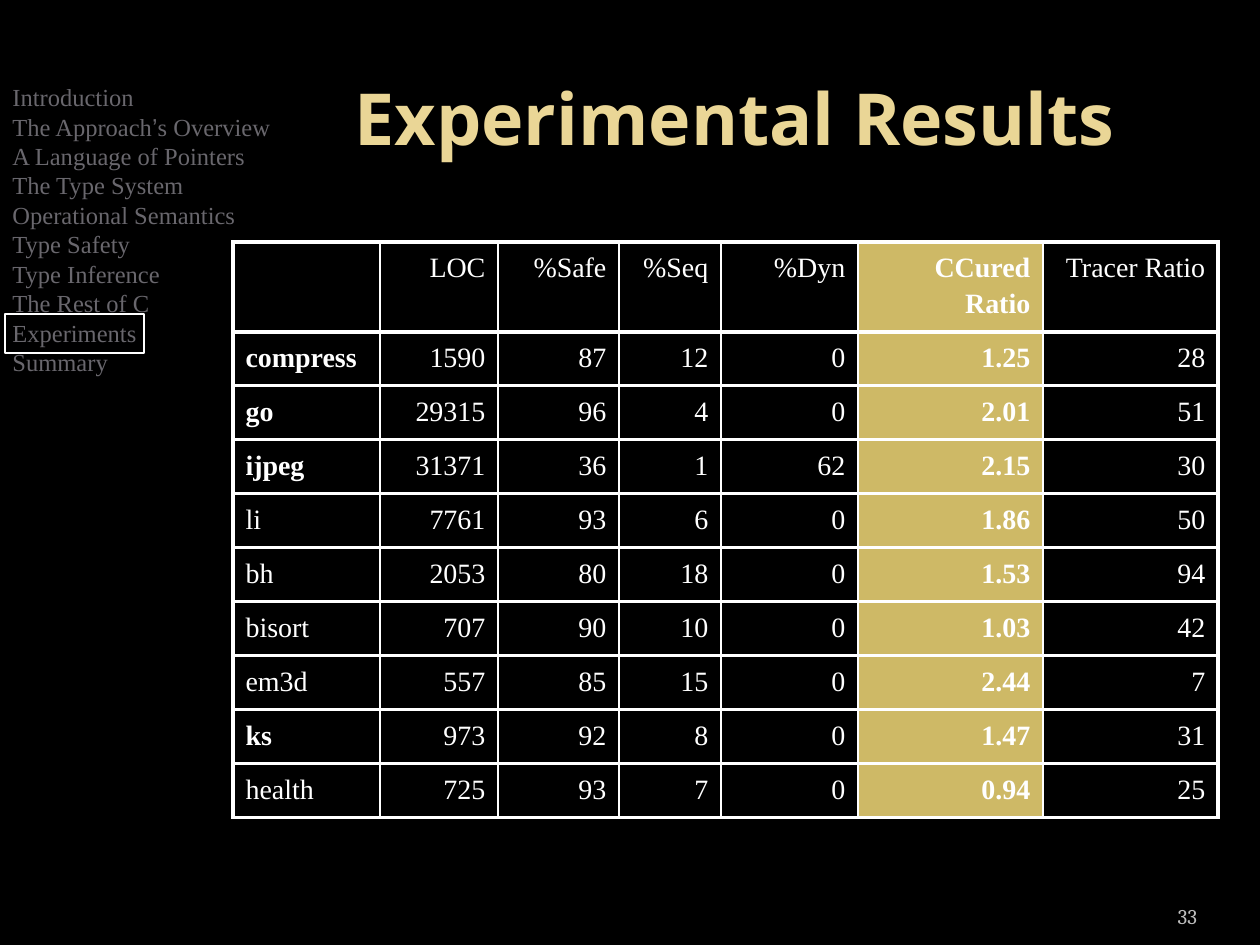
from lxml.etree import SubElement
from pptx import Presentation
from pptx.dml.color import RGBColor as RGB
from pptx.enum.shapes import MSO_SHAPE as SHAPE
from pptx.enum.text import MSO_ANCHOR as ANCHOR, MSO_AUTO_SIZE as AUTO, PP_ALIGN as ALIGN
from pptx.oxml.ns import qn
from pptx.util import Pt

COLORS = {
    "back": "000000",
    "white": "FFFFFF",
    "title": "EAD696",
    "gold": "CEB966",
    "outline": "69676D",
    "number": "BDBDBD",
}
SERIF = "Times New Roman"
PX = 914400 / 126

SECTIONS = [
    "Introduction", "The Approach’s Overview", "A Language of Pointers",
    "The Type System", "Operational Semantics", "Type Safety",
    "Type Inference", "The Rest of C", "Experiments", "Summary",
]
RESULTS = [
    ["", "LOC", "%Safe", "%Seq", "%Dyn", "CCured Ratio", "Tracer Ratio"],
    ["compress", "1590", "87", "12", "0", "1.25", "28"],
    ["go", "29315", "96", "4", "0", "2.01", "51"],
    ["ijpeg", "31371", "36", "1", "62", "2.15", "30"],
    ["li", "7761", "93", "6", "0", "1.86", "50"],
    ["bh", "2053", "80", "18", "0", "1.53", "94"],
    ["bisort", "707", "90", "10", "0", "1.03", "42"],
    ["em3d", "557", "85", "15", "0", "2.44", "7"],
    ["ks", "973", "92", "8", "0", "1.47", "31"],
    ["health", "725", "93", "7", "0", "0.94", "25"],
]
BOLD_NAMES = {"compress", "go", "ijpeg", "ks"}
COL_WIDTHS = [147, 118, 121, 102, 137, 185, 175]
HEADER_HEIGHT, ROW_HEIGHT = 68, 54
RATIO_COL = 5


def px(*values):
    return [round(v * PX) for v in values]


def color(name):
    return RGB.from_string(COLORS[name])


class Deck:
    def __init__(self, width, height):
        self.prs = Presentation()
        self.prs.slide_width, self.prs.slide_height = px(width, height)

    def add_slide(self):
        self.slide = self.prs.slides.add_slide(self.prs.slide_layouts[6])
        fill = self.slide.background.fill
        fill.solid()
        fill.fore_color.rgb = color("back")

    def style(self, r, size, font, name, bold=False):
        r.font.size = Pt(size)
        r.font.name = font
        r.font.bold = bold
        r.font.color.rgb = color(name)

    def text(self, box, text, size, font, name, align, anchor, bold=False):
        tf = self.slide.shapes.add_textbox(*px(*box)).text_frame
        tf.word_wrap = True
        tf.vertical_anchor = anchor
        tf.text = text
        p = tf.paragraphs[0]
        p.alignment = align
        self.style(p.runs[0], size, font, name, bold)
        return tf

    def outline(self, box, lines, size):
        tf = self.slide.shapes.add_textbox(*px(*box)).text_frame
        tf.word_wrap = False
        tf.auto_size = AUTO.SHAPE_TO_FIT_TEXT
        for i, line in enumerate(lines):
            p = tf.add_paragraph() if i else tf.paragraphs[0]
            for part in filter(None, line.partition("’")):
                r = p.add_run()
                r.text = part
                self.style(r, size, "Arial" if part == "’" else SERIF, "outline")

    def frame(self, box):
        sp = self.slide.shapes.add_shape(SHAPE.RECTANGLE, *px(*box))
        sp.shadow.inherit = False
        sp.fill.background()
        sp.line.color.rgb = color("white")
        sp.line.width = Pt(1)

    def borders(self, cell, widths):
        tc_pr = cell._tc.get_or_add_tcPr()
        for i, (side, width) in enumerate(widths.items()):
            ln = tc_pr.makeelement(qn(f"a:ln{side}"), {"w": str(Pt(width))})
            fill = SubElement(ln, qn("a:solidFill"))
            SubElement(fill, qn("a:srgbClr"), val=COLORS["white"])
            tc_pr.insert(i, ln)

    def cell(self, cell, text, align, bold, filled):
        if filled:
            cell.fill.solid()
            cell.fill.fore_color.rgb = color("gold")
        else:
            cell.fill.background()
        cell.text_frame.text = text
        p = cell.text_frame.paragraphs[0]
        p.alignment = align
        p.line_spacing = 1.15
        for tag in ("a:spcBef", "a:spcAft"):
            gap = SubElement(p._p.get_or_add_pPr(), qn(tag))
            SubElement(gap, qn("a:spcPct"), val="25000")
        for r in p.runs:
            self.style(r, 16, SERIF, "white", bold)

    def table(self, left, top, rows, widths, heights):
        box = px(left, top, sum(widths), sum(heights))
        table = self.slide.shapes.add_table(len(rows), len(widths), *box).table
        table.first_row = table.horz_banding = False
        for col, width in zip(table.columns, px(*widths)):
            col.width = width
        for row, height in zip(table.rows, px(*heights)):
            row.height = height
        last = len(widths) - 1
        for i, values in enumerate(rows):
            for j, value in enumerate(values):
                cell = table.cell(i, j)
                ratio = j == RATIO_COL
                self.cell(cell, value, ALIGN.RIGHT if j else ALIGN.LEFT,
                          ratio or value in BOLD_NAMES, ratio)
                self.borders(cell, {"L": 1 if j else 2.25,
                                    "R": 1 if j < last else 2.25,
                                    "T": 2.25, "B": 2.25})


def main():
    deck = Deck(1260, 945)
    deck.add_slide()
    deck.outline((0, 76, 285, 306), SECTIONS, 14)
    deck.text((273, 38, 924, 158), "Experimental Results", 41, "Open Sans",
              "title", ALIGN.CENTER, ANCHOR.MIDDLE, bold=True)
    number = deck.text((1092, 885, 105, 50), "33", 12, "Cambria",
                       "number", ALIGN.RIGHT, ANCHOR.BOTTOM)
    number.margin_left = number.margin_right = 0
    heights = [HEADER_HEIGHT] + [ROW_HEIGHT] * (len(RESULTS) - 1)
    deck.table(233, 242, RESULTS, COL_WIDTHS, heights)
    deck.frame((5, 314, 139, 39))
    deck.prs.save("out.pptx")


if __name__ == "__main__":
    main()
